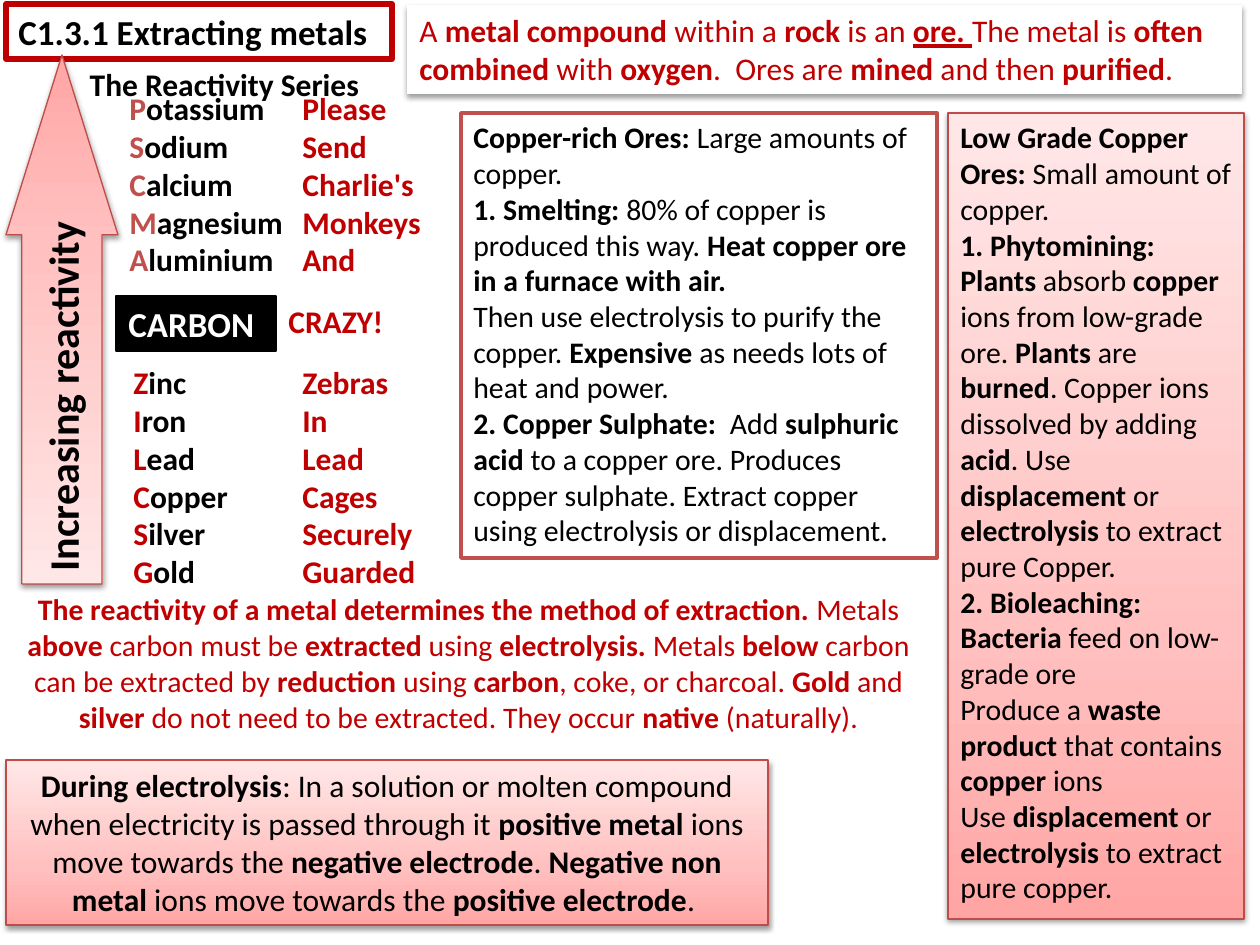
from lxml import etree
from pptx import Presentation
from pptx.dml.color import RGBColor
from pptx.enum.shapes import MSO_SHAPE as Shape
from pptx.enum.text import MSO_ANCHOR as Anchor, MSO_AUTO_SIZE as AutoSize, PP_ALIGN as Align
from pptx.oxml import parse_xml
from pptx.oxml.ns import nsdecls, qn
from pptx.util import Emu, Pt

SCALE = 914400 / 126
BLACK = RGBColor(0x00, 0x00, 0x00)
WHITE = RGBColor(0xFF, 0xFF, 0xFF)
RED = RGBColor(0xC0, 0x00, 0x00)
BRICK = RGBColor(0xC0, 0x50, 0x4D)
PINK_EDGE = RGBColor(0xBF, 0x4C, 0x48)
PINK_STOPS = (
    (0, RGBColor(0xFF, 0xA6, 0xA5)),
    (35, RGBColor(0xFF, 0xC0, 0xBF)),
    (100, RGBColor(0xFF, 0xE7, 0xE7)),
)

ABOVE_CARBON = ["Potassium", "Sodium", "Calcium", "Magnesium", "Aluminium"]
ABOVE_WORDS = ["Please", "Send", "Charlie's", "Monkeys", "And"]
BELOW_CARBON = ["Zinc", "Iron", "Lead", "Copper", "Silver", "Gold"]
BELOW_WORDS = ["Zebras", "In", "Lead", "Cages", "Securely", "Guarded"]

EXTRACTION = [
    "*The reactivity of a metal determines the method of extraction.* Metals *above* carbon "
    "must be *extracted* using *electrolysis. *Metals *below* carbon can be extracted by "
    "*reduction* using *carbon*, coke, or charcoal. *Gold* and *silver* do not need to be "
    "extracted. They occur *native *(naturally)."
]
ORE = [
    "A *metal compound* within a *rock* is an *_ore. *The metal is *often combined* with "
    "*oxygen*.  Ores are *mined *and then *purified*."
]
COPPER_RICH = [
    "*Copper-rich Ores: *Large amounts of copper. \n*1. Smelting: *80% of copper is produced "
    "this way. *Heat copper ore in a furnace with air.*",
    "Then use electrolysis to purify the copper. *Expensive *as needs lots of heat and power.",
    "*2. Copper Sulphate:  *Add *sulphuric acid* to a copper ore. Produces copper sulphate. "
    "Extract copper using electrolysis or displacement.",
]
LOW_GRADE = [
    "*Low Grade Copper Ores: *Small amount of copper. \n*1. Phytomining: Plants *absorb "
    "*copper* ions from low-grade ore. *Plants *are *burned*. Copper ions dissolved by adding "
    "*acid*. Use *displacement* or *electrolysis* to extract pure Copper.",
    "*2. Bioleaching: Bacteria *feed on low-grade ore",
    "Produce a *waste product* that contains *copper* ions",
    "Use *displacement* or *electrolysis* to extract pure copper.",
]
ELECTROLYSIS = [
    "*During electrolysis*: In a solution or molten compound when electricity is passed through "
    "it *positive metal *ions move towards the *negative electrode*. *Negative non metal *ions "
    "move towards the *positive electrode*. "
]


def px(*lengths):
    """Turn pixel lengths into EMU."""
    return [Emu(round(length * SCALE)) for length in lengths]


def add_block(shapes, place, fill=None, line=None, width=0.75, kind=Shape.RECTANGLE):
    """Add a flat preset shape with an optional solid fill and outline."""
    block = shapes.add_shape(kind, *px(*place))
    block.shadow.inherit = False
    if fill is None:
        block.fill.background()
    else:
        block.fill.solid()
        block.fill.fore_color.rgb = fill
    if line is None:
        block.line.fill.background()
    else:
        block.line.color.rgb = line
        block.line.width = Pt(width)
    return block


def add_shadow(block):
    """Give a shape a soft shadow straight below it."""
    effects = block._element.spPr.find(qn("a:effectLst"))
    shadow = etree.SubElement(
        effects, qn("a:outerShdw"), blurRad="40000", dist="20000", dir="5400000", rotWithShape="0"
    )
    color = etree.SubElement(shadow, qn("a:srgbClr"), val=str(BLACK))
    etree.SubElement(color, qn("a:alpha"), val="38000")


def add_pink_block(shapes, place, kind=Shape.RECTANGLE):
    """Add a shadowed shape with the pink gradient."""
    block = add_block(shapes, place, WHITE, PINK_EDGE, kind=kind)
    add_shadow(block)
    stops = "".join(
        f'<a:gs pos="{percent * 1000}"><a:srgbClr val="{color}"/></a:gs>'
        for percent, color in PINK_STOPS
    )
    gradient = parse_xml(
        f'<a:gradFill {nsdecls("a")} rotWithShape="1"><a:gsLst>{stops}</a:gsLst>'
        '<a:lin ang="16200000" scaled="0"/></a:gradFill>'
    )
    properties = block._element.spPr
    properties.replace(properties.find(qn("a:solidFill")), gradient)
    return block


def add_span(para, text, bold=None, color=None):
    """Add a run, turning each newline into a line break."""
    for index, part in enumerate(text.split("\n")):
        if index:
            para.add_line_break()
        if part:
            span = para.add_run()
            span.text = part.removeprefix("_")
            span.font.bold = bold
            if part.startswith("_"):
                span.font.underline = True
            if color is not None:
                span.font.color.rgb = color


def write(box, lines, size, color=BLACK, align=Align.LEFT, initial=None, wrap=True, grow=True):
    """Write paragraphs in which asterisks enclose bold words; unmarked text with no asterisk in the box is bold."""
    frame = box.text_frame
    frame.word_wrap = wrap
    frame.auto_size = AutoSize.SHAPE_TO_FIT_TEXT if grow else AutoSize.NONE
    frame.vertical_anchor = Anchor.TOP if grow else Anchor.MIDDLE
    mixed = any("*" in line for line in lines)
    for index, line in enumerate(lines):
        para = frame.add_paragraph() if index else frame.paragraphs[0]
        para.alignment = align
        para.font.name = "Calibri"
        para.font.size = Pt(size)
        para.font.color.rgb = color
        para.font.bold = not mixed
        if initial is not None:
            add_span(para, line[0], color=initial)
            add_span(para, line[1:])
        else:
            for order, piece in enumerate(line.split("*")):
                add_span(para, piece, bold=order % 2 == 1 if mixed else None)


def add_label(shapes, place, lines, **style):
    """Add a plain text box in the size of the reactivity list."""
    write(shapes.add_textbox(*px(*place)), lines, 18, **style)


def add_arrow(shapes):
    """Add the upward arrow with its vertical caption."""
    arrow = add_pink_block(shapes, (6, 55, 112, 529), Shape.DOWN_ARROW)
    arrow.adjustments[0] = 0.716
    arrow.adjustments[1] = 1.606
    arrow._element.spPr.xfrm.set("flipV", "1")
    write(arrow, ["Increasing reactivity"], 24, align=Align.CENTER, wrap=False, grow=False)
    arrow.text_frame._txBody.bodyPr.set("vert", "eaVert")


def add_reactivity_series(page):
    """Add the grouped metals, their mnemonic and the arrow."""
    shapes = page.shapes.add_group_shape().shapes
    add_label(shapes, (117, 83, 213, 210), ABOVE_CARBON, initial=BRICK)
    add_label(shapes, (121, 357, 169, 249), BELOW_CARBON, initial=RED)
    add_arrow(shapes)
    add_label(shapes, (290, 83, 192, 210), ABOVE_WORDS, color=RED)
    carbon = add_block(shapes, (116, 296, 160, 55), BLACK, BLACK)
    write(carbon, ["CARBON"], 20, WHITE, wrap=False, grow=False)
    add_label(shapes, (290, 357, 192, 249), BELOW_WORDS, color=RED)
    add_label(shapes, (276, 296, 192, 92), ["CRAZY!"], color=RED)


def main():
    """Build the slide and save it."""
    deck = Presentation()
    deck.slide_width, deck.slide_height = px(1260, 945)
    page = deck.slides.add_slide(deck.slide_layouts[6])
    shapes = page.shapes
    write(add_block(shapes, (3, 585, 931, 158), WHITE), EXTRACTION, 17, RED, Align.CENTER)
    ore = add_block(shapes, (407, 5, 835, 89), WHITE)
    add_shadow(ore)
    write(ore, ORE, 18, RED)
    title = add_block(shapes, (6, 4, 386, 55), line=RED, width=3)
    write(title, ["C1.3.1 Extracting metals"], 20, wrap=False)
    add_reactivity_series(page)
    add_label(shapes, (76, 59, 297, 50), ["The Reactivity Series"], align=Align.CENTER, wrap=False)
    write(add_block(shapes, (461, 113, 476, 445), WHITE, BRICK, 2), COPPER_RICH, 17)
    write(add_pink_block(shapes, (948, 113, 296, 806)), LOW_GRADE, 17)
    write(add_pink_block(shapes, (6, 760, 762, 165)), ELECTROLYSIS, 18, align=Align.CENTER)
    deck.save("out.pptx")


if __name__ == "__main__":
    main()
